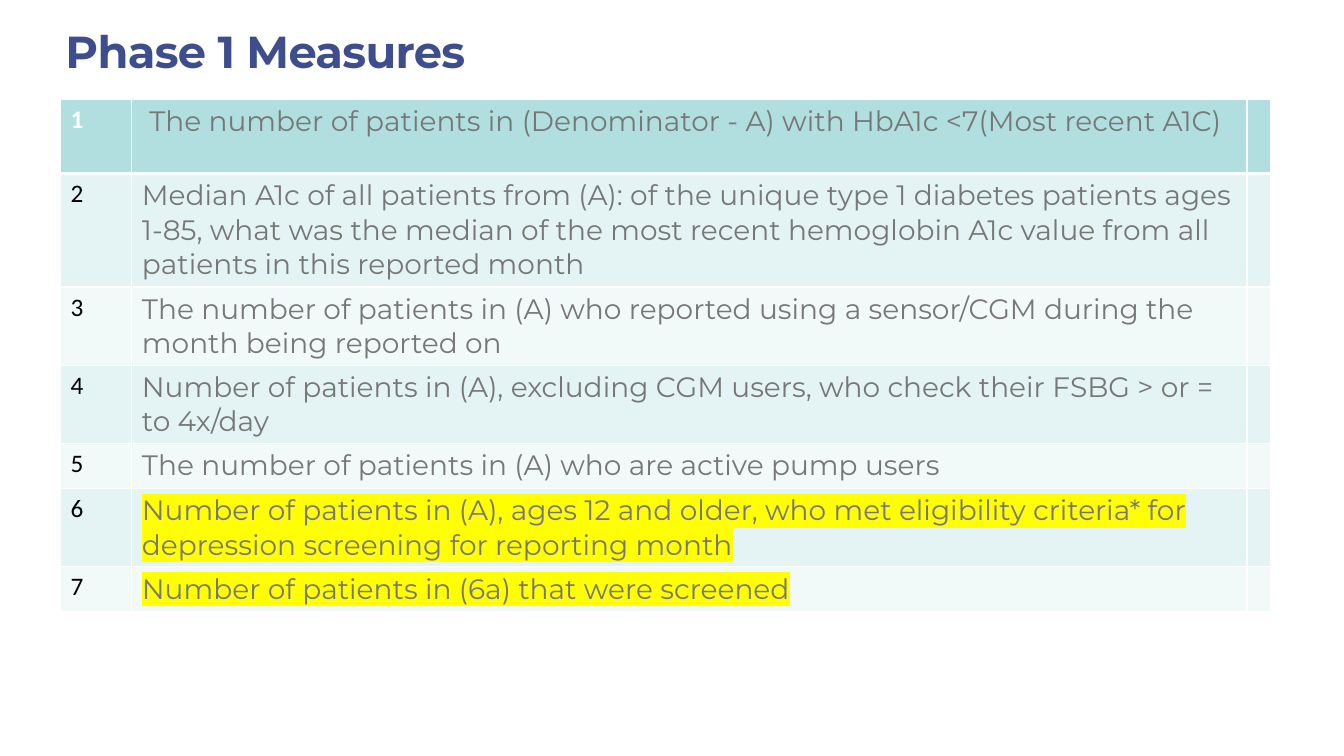
from lxml import etree
from pptx import Presentation
from pptx.dml.color import RGBColor
from pptx.enum import text
from pptx.oxml.ns import qn
from pptx.util import Pt


def rgb(value):
    return RGBColor.from_string(value)


def add_color(parent, tag, value):
    el = etree.SubElement(parent, qn(tag))
    etree.SubElement(el, qn("a:srgbClr"), val=value)


prs = Presentation()
prs.slide_width, prs.slide_height = Pt(960), Pt(540)
s = prs.slides.add_slide(prs.slide_layouts[6])

# Title
tf = s.shapes.add_textbox(Pt(43.2), Pt(18), Pt(864), Pt(36)).text_frame
tf.word_wrap = True
tf.vertical_anchor = text.MSO_ANCHOR.MIDDLE
tf.margin_left = tf.margin_right = tf.margin_top = tf.margin_bottom = Pt(3.6)
p = tf.paragraphs[0]
r = p.add_run()
r.text = "Phase 1 Measures"
r._r.get_or_add_rPr().set("spc", "-50")
p.font.name, p.font.size, p.font.bold = "Montserrat", Pt(32), True
p.font.color.rgb = rgb("3E4E8D")

# Measures: row height, wording, highlighted
measures = [
    (53, " The number of patients in (Denominator - A) with HbA1c <7(Most recent A1C)", False),
    (81, "Median A1c of all patients from (A): of the unique type 1 diabetes patients ages "
         "1-85, what was the median of the most recent hemoglobin A1c value from all "
         "patients in this reported month", False),
    (56, "The number of patients in (A) who reported using a sensor/CGM during the "
         "month being reported on", False),
    (56, "Number of patients in (A), excluding CGM users, who check their FSBG > or = "
         "to 4x/day", False),
    (32, "The number of patients in (A) who are active pump users", False),
    (56, "Number of patients in (A), ages 12 and older, who met eligibility criteria* for "
         "depression screening for reporting month", True),
    (32, "Number of patients in (6a) that were screened", True),
]
widths = [51, 796.5, 16.5]

# Table
table = s.shapes.add_table(len(measures), len(widths), Pt(43.2), Pt(71), Pt(864),
                           Pt(sum(m[0] for m in measures))).table
table.horz_banding = False
for column, width in zip(table.columns, widths):
    column.width = Pt(width)

for i, (height, wording, highlighted) in enumerate(measures):
    table.rows[i].height = Pt(height)
    header = i == 0
    fill = "B1DFE0" if header else ("F2F9F9", "E4F3F3")[i % 2]
    for j, content in enumerate([str(i + 1), wording, ""]):
        cell = table.cell(i, j)

        # White grid, thicker around the header's lower edge
        tcPr = cell._tc.get_or_add_tcPr()
        for side in "LRTB":
            thick = (header and side == "B") or (i == 1 and side == "T")
            ln = etree.SubElement(tcPr, qn(f"a:ln{side}"), w=str(Pt(3 if thick else 1)))
            add_color(ln, "a:solidFill", "FFFFFF")
        cell.fill.solid()
        cell.fill.fore_color.rgb = rgb(fill)

        # Number or wording
        if not content:
            continue
        p = cell.text_frame.paragraphs[0]
        r = p.add_run()
        r.text = content
        if j == 0:
            name, size, color = "Calibri", 18, "FFFFFF" if header else "000000"
        else:
            name, size, color = "Montserrat", 20, "777777"
            if highlighted:
                add_color(r._r.get_or_add_rPr(), "a:highlight", "FFFF00")
        p.font.name, p.font.size, p.font.bold = name, Pt(size), header and j == 0
        p.font.color.rgb = rgb(color)

prs.save("out.pptx")
